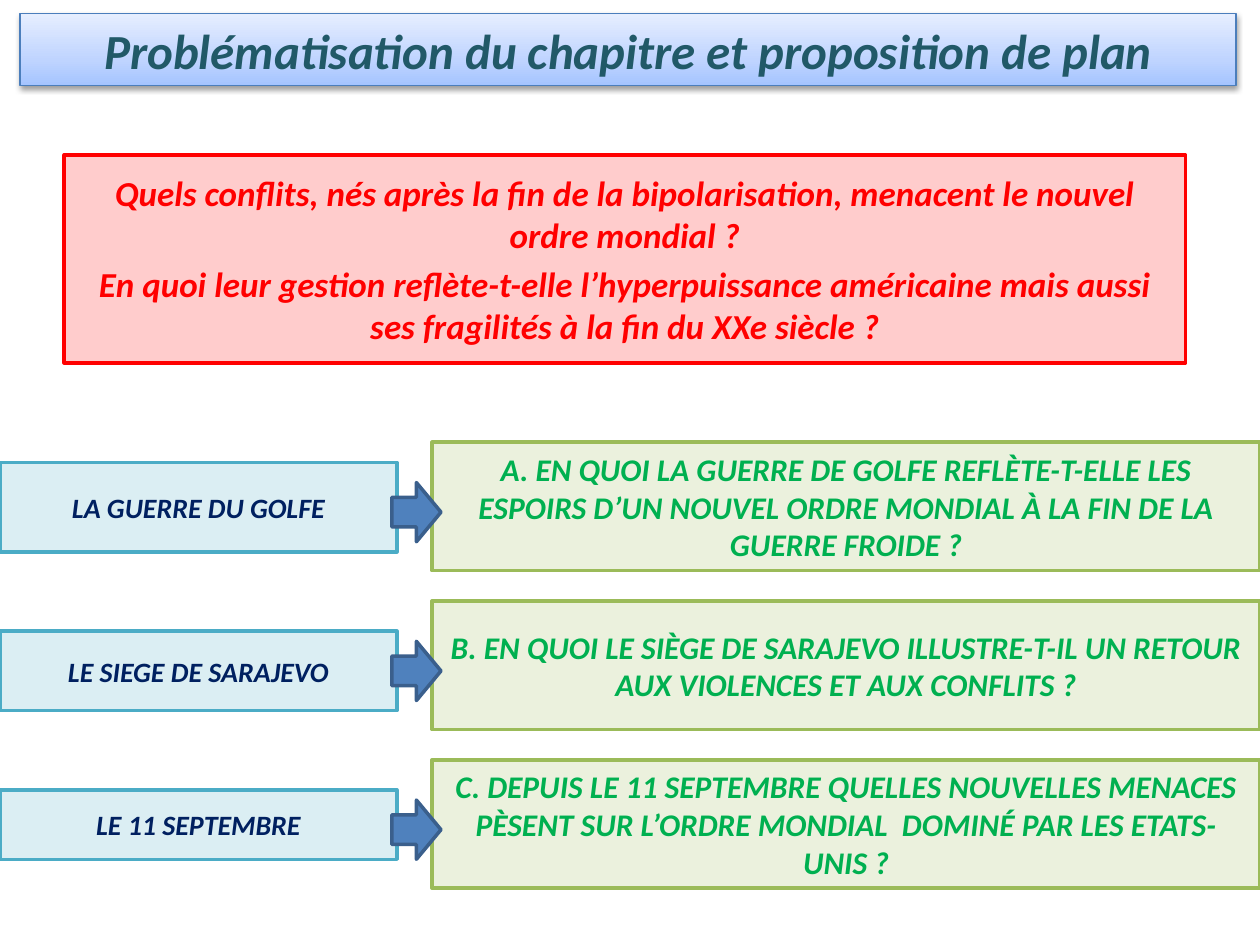
from copy import deepcopy

from lxml.etree import SubElement
from pptx import Presentation
from pptx.dml.color import RGBColor
from pptx.enum.shapes import MSO_SHAPE
from pptx.enum.text import MSO_ANCHOR, PP_ALIGN
from pptx.oxml.ns import qn
from pptx.util import Inches, Pt

TITLE = "Problématisation du chapitre et proposition de plan"
QUESTIONS = [
    "Quels conflits, nés après la fin de la bipolarisation, menacent le nouvel ordre mondial\u00a0?",
    "En quoi leur gestion reflète-t-elle l’hyperpuissance américaine mais aussi ses fragilités "
    "à la fin du XXe siècle\u00a0?",
]
PARTS = [
    ("LA GUERRE DU GOLFE", 0.16, 0.71,
     "A. EN QUOI LA GUERRE DE GOLFE REFLÈTE-T-ELLE LES ESPOIRS D’UN NOUVEL ORDRE MONDIAL "
     "À LA FIN DE LA GUERRE FROIDE ?"),
    ("LE SIEGE DE SARAJEVO", 0.24, 0.63,
     "B. EN QUOI LE SIÈGE DE SARAJEVO ILLUSTRE-T-IL UN RETOUR AUX VIOLENCES ET AUX CONFLITS ?"),
    ("LE 11 SEPTEMBRE", 0.24, 0.55,
     "C. DEPUIS LE 11 SEPTEMBRE QUELLES NOUVELLES MENACES PÈSENT SUR L’ORDRE MONDIAL  DOMINÉ "
     "PAR LES ETATS-UNIS ?"),
]


def rgb(value):
    """Return the colour for a hex string."""
    return RGBColor.from_string(value)


def add_box(s, box, fill, line, width=2, alpha=None, kind=MSO_SHAPE.RECTANGLE):
    """Add a filled, outlined shape; alpha is its opacity in percent."""
    sp = s.shapes.add_shape(kind, *map(Inches, box))
    sp.shadow.inherit = False
    sp.fill.solid()
    sp.fill.fore_color.rgb = rgb(fill)
    if alpha is not None:
        color = sp.fill._xPr.find(".//" + qn("a:srgbClr"))
        SubElement(color, qn("a:alpha"), val=str(alpha * 1000))
    sp.line.color.rgb = rgb(line)
    sp.line.width = Pt(width)
    return sp


def write(sp, lines, size, color, space=0):
    """Write centred bold italic paragraphs in a shape."""
    tf = sp.text_frame
    tf.word_wrap = True
    tf.vertical_anchor = MSO_ANCHOR.MIDDLE
    font = {"name": "Calibri", "size": Pt(size), "bold": True, "italic": True}
    for i, line in enumerate(lines):
        p = tf.paragraphs[0] if i == 0 else tf.add_paragraph()
        p.alignment = PP_ALIGN.CENTER
        p.space_before = Pt(space)
        r = p.add_run()
        r.text = line
        for name, value in font.items():
            setattr(r.font, name, value)
        r.font.color.rgb = rgb(color)


def add_title(s, box):
    """Add the title banner with its gradient and shadow."""
    sp = add_box(s, box, "BFD4FF", "4B7EBC", 0.75)
    sp.fill.gradient()
    sp.fill.gradient_angle = 90
    stops = sp.fill._xPr.find(".//" + qn("a:gsLst"))
    stops.append(deepcopy(stops[-1]))
    palette = [(0, "A4C4FF"), (0.35, "BFD4FF"), (1, "E6EEFF")]
    for stop, (position, color) in zip(sp.fill.gradient_stops, palette):
        stop.position = position
        stop.color.rgb = rgb(color)
    effects = sp._element.spPr.find(qn("a:effectLst"))
    shadow = SubElement(effects, qn("a:outerShdw"), blurRad=str(Pt(3.1)),
                        dist=str(Pt(1.6)), dir="5400000", rotWithShape="0")
    color = SubElement(shadow, qn("a:srgbClr"), val="000000")
    SubElement(color, qn("a:alpha"), val="38000")
    write(sp, [TITLE], 28, "215968")


def add_questions(s, box):
    """Add the box of guiding questions."""
    write(add_box(s, box, "FF0000", "FF0000", alpha=20), QUESTIONS, 20, "FF0000", 4)


def add_part(s, box, topic, offset, height, question):
    """Add one row of the plan: topic, question and the arrow between them."""
    x, y, w, h = box
    left = add_box(s, (x, y + offset, 3.15, height), "4BACC6", "4BACC6", alpha=20)
    write(left, [topic], 16, "002060")
    right = add_box(s, (x + 3.43, y, w - 3.43, h), "9BBB59", "9BBB59", alpha=20)
    write(right, [question], 18, "00B050")
    add_box(s, (x + 3.11, y + 0.32, 0.39, 0.47), "4F81BD", "3A5F8C",
            kind=MSO_SHAPE.RIGHT_ARROW)


def main():
    """Build the slide and save it."""
    prs = Presentation()
    prs.slide_width, prs.slide_height = Inches(10), Inches(7.5)
    s = prs.slides.add_slide(prs.slide_layouts[6])
    add_title(s, (0.16, 0.11, 9.65, 0.57))
    add_questions(s, (0.51, 1.23, 8.9, 1.65))
    for i, part in enumerate(PARTS):
        add_part(s, (0, 3.51 + 1.26 * i, 10, 1.02), *part)
    prs.save("out.pptx")


if __name__ == "__main__":
    main()
